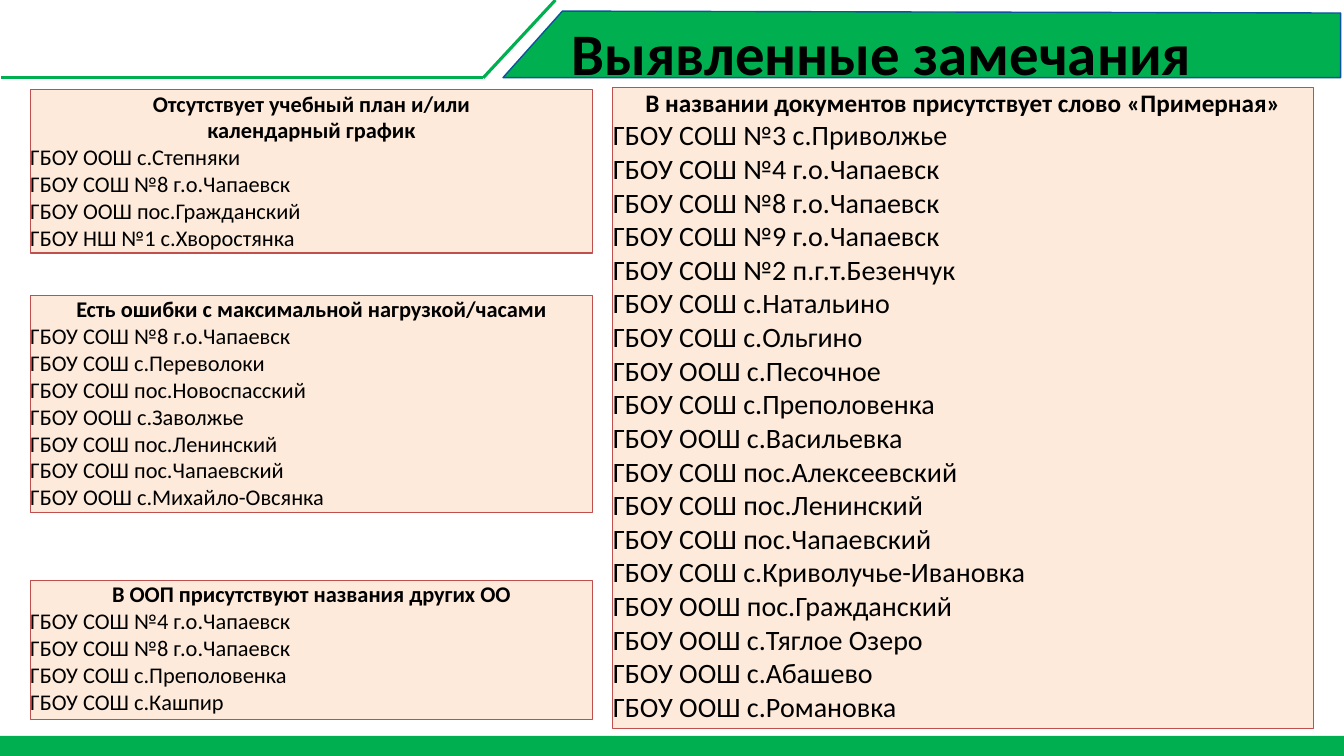
import pptx
import pptx.util
import pptx.dml.color
import pptx.enum.shapes
import pptx.enum.text
import pptx.oxml.ns
import lxml.etree

Pt = pptx.util.Pt
RGB = pptx.dml.color.RGBColor
ALIGN = pptx.enum.text.PP_ALIGN
GREEN = RGB(0x00, 0xB0, 0x50)
BLUE = RGB(0x0C, 0x54, 0x9E)
PEACH = RGB(0xFD, 0xEA, 0xDA)
RED = RGB(0xC0, 0x50, 0x4D)
BLACK = RGB(0, 0, 0)
FRAME = {
    "margin_left": 0, "margin_right": 0, "margin_top": 0, "margin_bottom": 0,
    "word_wrap": True,
    "auto_size": pptx.enum.text.MSO_AUTO_SIZE.NONE,
    "vertical_anchor": pptx.enum.text.MSO_ANCHOR.TOP,
}


class Deck:
    """Style and current slide; lengths are percent of the slide's size."""

    def __init__(self, wide, high):
        self.file = pptx.Presentation()
        self.file.slide_width = pptx.util.Inches(wide)
        self.file.slide_height = pptx.util.Inches(high)
        self.slide = self.file.slides.add_slide(self.file.slide_layouts[0])
        self.shapes = self.slide.shapes

    def scale(self, *shares):
        """Turn x, y, x, y... shares into lengths."""
        sides = self.file.slide_width, self.file.slide_height
        return [round(s * sides[i % 2] / 100) for i, s in enumerate(shares)]

    def paint(self, shape, fill, line=None, width=1):
        shape.shadow.inherit = False
        shape.fill.solid()
        shape.fill.fore_color.rgb = fill
        if line is None:
            shape.line.fill.background()
        else:
            shape.line.color.rgb = line
            shape.line.width = Pt(width)

    def rect(self, place):
        kind = pptx.enum.shapes.MSO_SHAPE.RECTANGLE
        return self.shapes.add_shape(kind, *self.scale(*place))

    def shape(self, points, fill, line):
        first, *rest = [self.scale(*p) for p in points]
        path = self.shapes.build_freeform(*first)
        path.add_line_segments(rest, close=True)
        self.paint(path.convert_to_shape(), fill, line)

    def line(self, start, end):
        kind = pptx.enum.shapes.MSO_CONNECTOR.STRAIGHT
        line = self.shapes.add_connector(kind, *self.scale(*start, *end))
        line.line.color.rgb = GREEN
        line.line.width = Pt(2.25)
        tag = pptx.oxml.ns.qn("a:effectLst")
        lxml.etree.SubElement(line._element.spPr, tag)

    def holder(self, index, place):
        """Move a placeholder into place, above what is drawn so far."""
        item = self.slide.placeholders[index]
        sides = "left", "top", "width", "height"
        for side, size in zip(sides, self.scale(*place)):
            setattr(item, side, size)
        self.shapes._spTree.append(item._element)
        return item

    def text(self, item, rows):
        """Fill an item with rows of (text, size, bold, align)."""
        frame = item.text_frame
        for name, value in FRAME.items():
            setattr(frame, name, value)
        for i, (text, size, bold, align) in enumerate(rows):
            para = frame.add_paragraph() if i else frame.paragraphs[0]
            para.alignment = align
            para.space_before = Pt(0)
            run = para.add_run()
            run.text = text
            style = {"name": "Calibri", "size": Pt(size), "bold": bold}
            for name, value in style.items():
                setattr(run.font, name, value)
            run.font.color.rgb = BLACK

    def panel(self, item, heads, names, head_size=16, size=16):
        self.paint(item, PEACH, RED, 0.75)
        rows = [(head, head_size, True, ALIGN.CENTER) for head in heads]
        rows += [(f"ГБОУ {name}", size, False, ALIGN.LEFT) for name in names]
        self.text(item, rows)


def main():
    deck = Deck(13.33, 7.5)

    # Banner, corner lines and bottom bar
    deck.shape([(41.85, 1.47), (99.75, 1.73), (99.75, 10.27), (37.43, 10.27)],
               GREEN, BLUE)
    deck.paint(deck.rect((0, 97.33, 100, 2.67)), GREEN)
    bend = 35.95, 10.3
    deck.line((41.33, 0), bend)
    deck.line(bend, (0.08, 10.3))

    # Title
    title = deck.holder(0, (42.53, 2.27, 56.85, 9.47))
    deck.text(title, [("Выявленные замечания", 42, True, ALIGN.LEFT)])

    # Left column
    left, wide = 2.25, 41.85
    deck.panel(
        deck.holder(1, (left, 11.87, wide, 21.6)),
        ["Отсутствует учебный план и/или", "календарный график"],
        ["ООШ с.Степняки", "СОШ №8 г.о.Чапаевск",
         "ООШ пос.Гражданский", "НШ №1 с.Хворостянка"])
    deck.panel(
        deck.rect((left, 39.07, wide, 28.67)),
        ["Есть ошибки с максимальной нагрузкой/часами"],
        ["СОШ №8 г.о.Чапаевск", "СОШ с.Переволоки",
         "СОШ пос.Новоспасский", "ООШ с.Заволжье", "СОШ пос.Ленинский",
         "СОШ пос.Чапаевский", "ООШ с.Михайло-Овсянка"])
    deck.panel(
        deck.rect((left, 76.8, wide, 18.4)),
        ["В ООП присутствуют названия других ОО"],
        ["СОШ №4 г.о.Чапаевск", "СОШ №8 г.о.Чапаевск",
         "СОШ с.Преполовенка", "СОШ с.Кашпир"])

    # Right column
    deck.panel(
        deck.rect((45.6, 11.6, 52.13, 84.8)),
        ["В названии документов присутствует слово «Примерная»"],
        ["СОШ №3 с.Приволжье", "СОШ №4 г.о.Чапаевск",
         "СОШ №8 г.о.Чапаевск", "СОШ №9 г.о.Чапаевск",
         "СОШ №2 п.г.т.Безенчук", "СОШ с.Натальино", "СОШ с.Ольгино",
         "ООШ с.Песочное", "СОШ с.Преполовенка", "ООШ с.Васильевка",
         "СОШ пос.Алексеевский", "СОШ пос.Ленинский",
         "СОШ пос.Чапаевский", "СОШ с.Криволучье-Ивановка",
         "ООШ пос.Гражданский", "ООШ с.Тяглое Озеро", "ООШ с.Абашево",
         "ООШ с.Романовка"],
        head_size=18, size=20)

    deck.file.save("out.pptx")


if __name__ == "__main__":
    main()
